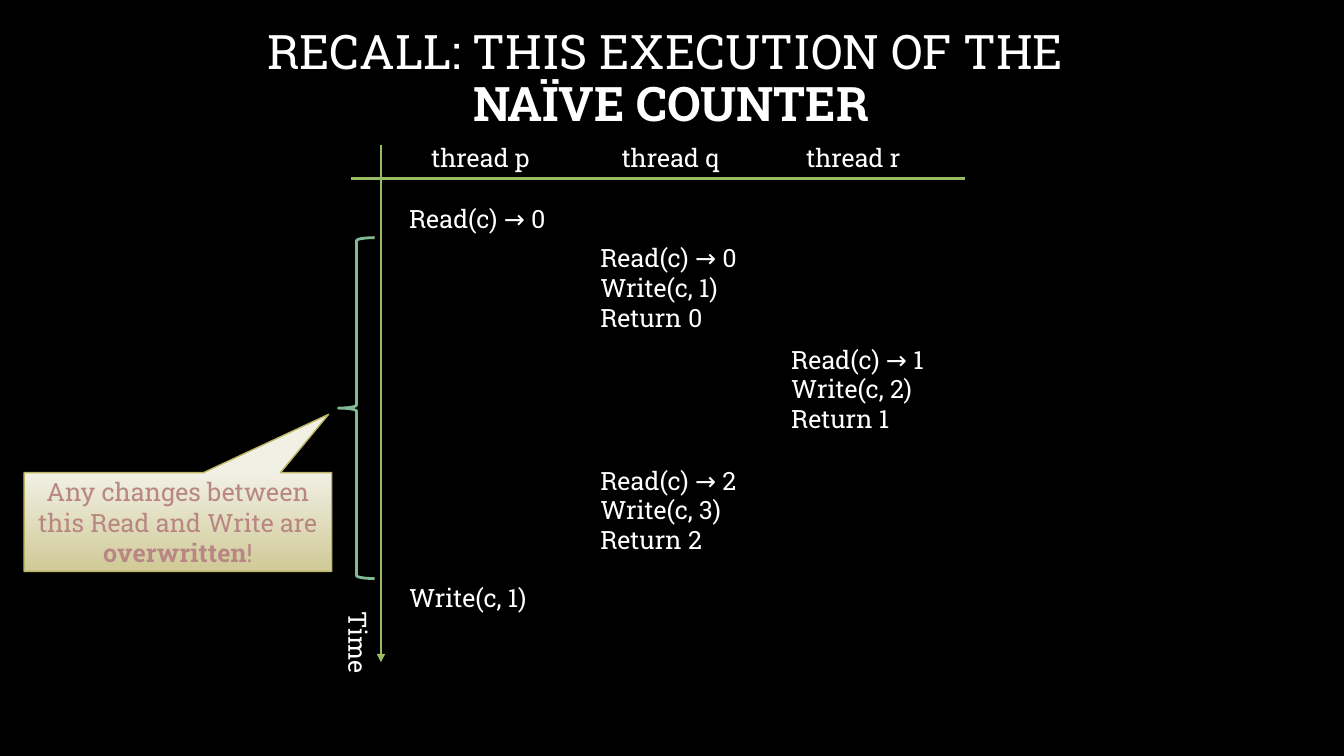
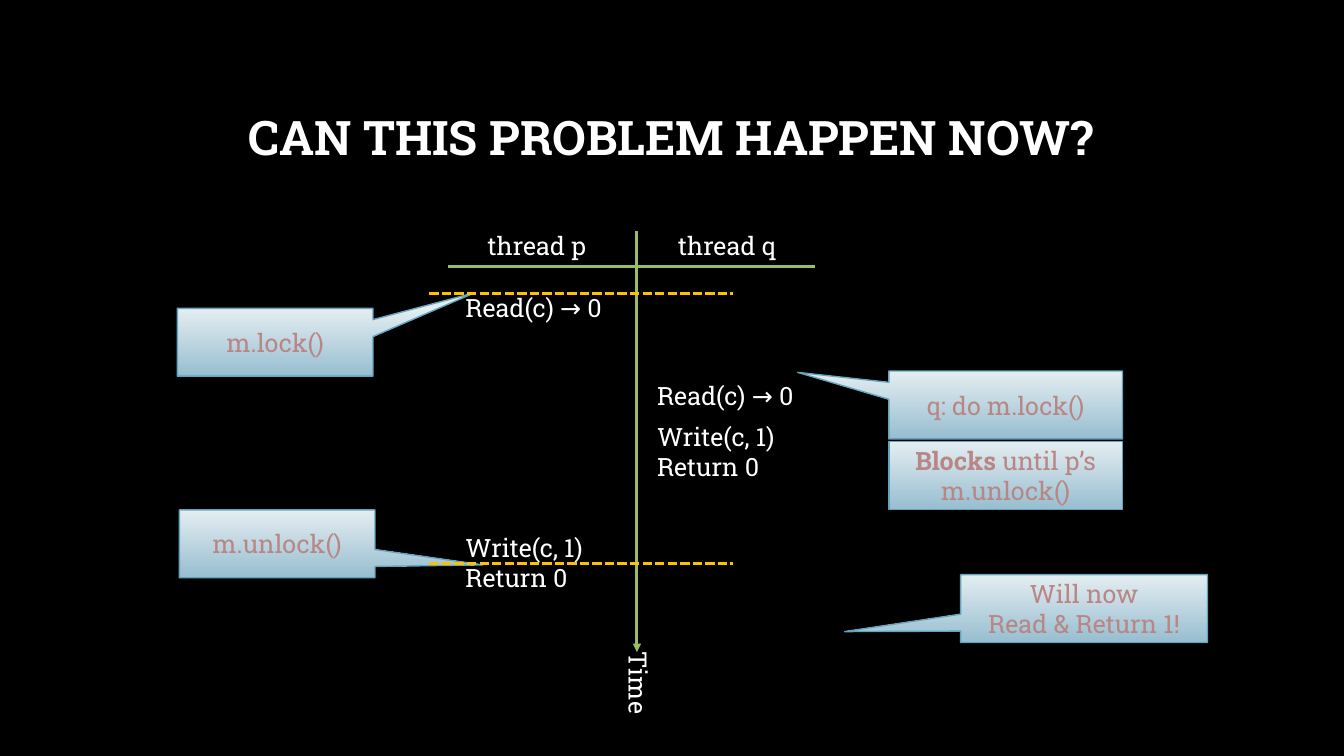
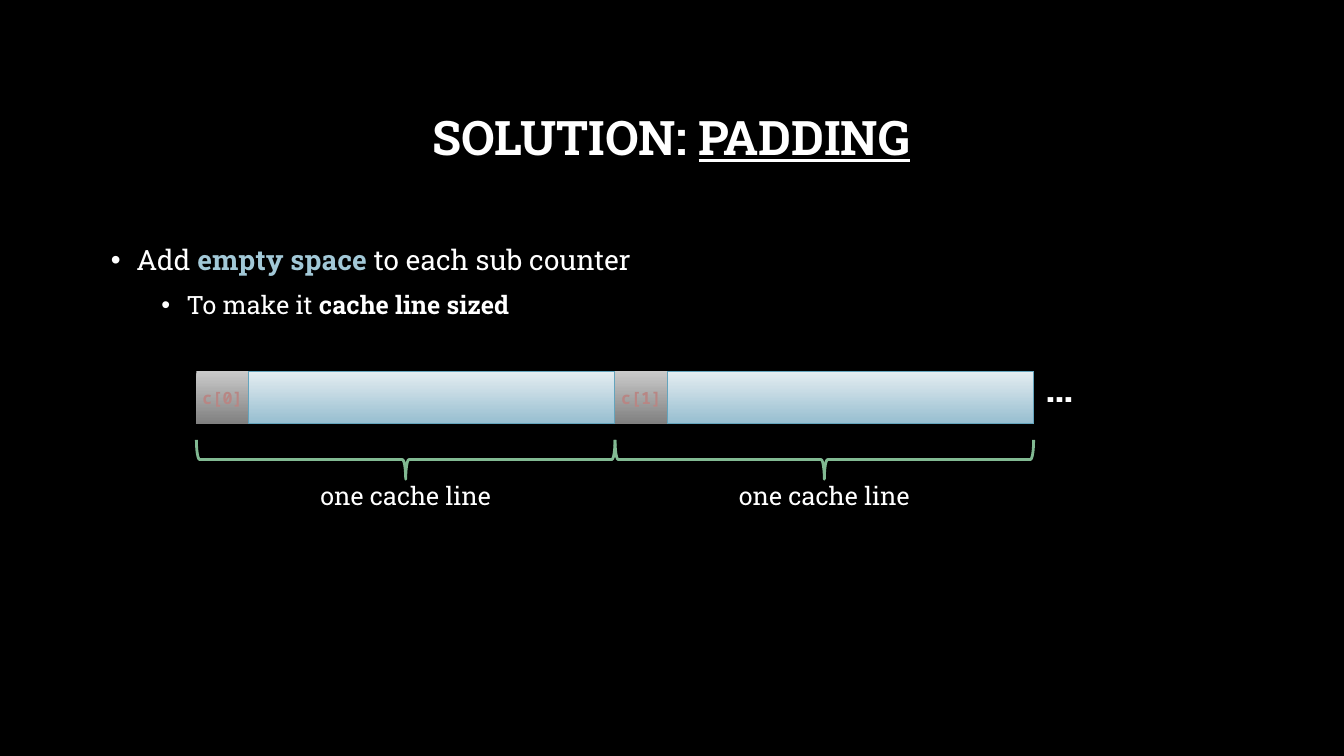
from lxml import etree
from pptx import Presentation
from pptx.dml.color import RGBColor
from pptx.enum.dml import MSO_LINE
from pptx.enum.shapes import MSO_CONNECTOR, MSO_SHAPE
from pptx.enum.text import MSO_ANCHOR, MSO_AUTO_SIZE, PP_ALIGN
from pptx.oxml.ns import qn
from pptx.util import Cm, Pt

RECT, CALLOUT = MSO_SHAPE.RECTANGLE, MSO_SHAPE.RECTANGULAR_CALLOUT
BRACE = MSO_SHAPE.LEFT_BRACE
STRAIGHT, DASH = MSO_CONNECTOR.STRAIGHT, MSO_LINE.SQUARE_DOT
MIDDLE, TOP = MSO_ANCHOR.MIDDLE, MSO_ANCHOR.TOP
LEFT, CENTER = PP_ALIGN.LEFT, PP_ALIGN.CENTER
FIT, FIXED = MSO_AUTO_SIZE.SHAPE_TO_FIT_TEXT, MSO_AUTO_SIZE.NONE

COLORS = {
    "back": "000000", "text": "FFFFFF", "note": "B88684", "axis": "9ABC65",
    "brace": "81B992", "dash": "FFC000", "key": "A2C8D7",
}
# Gradient top, gradient bottom, outline
FILLS = {
    "blue": ("E4EDF1", "97BED0", "64A4BD"),
    "sand": ("F1F0E4", "D0CA97", "BDB564"),
    "grey": ("CACACA", "808080", None),
}
BASE = {"name": "Roboto Slab", "size": Pt(18), "bold": False}
TITLE = {"size": Pt(34), "bold": True}
BOLD = {"bold": True}
CODE = {"name": "Noto Sans Mono", "size": Pt(12), "bold": True}
LINE_H, PAIR_H = 1.02, 1.8


def rgb(value):
    return RGBColor.from_string(value)


def box(*sizes):
    return [Cm(size) for size in sizes]


def put(frame, paras, align=LEFT, color="text", look=None, **form):
    """Fill a frame; each paragraph is a string or a list of (text, look)."""
    for num, parts in enumerate(paras):
        para = frame.paragraphs[0] if num == 0 else frame.add_paragraph()
        for name, value in {"alignment": align, **form}.items():
            setattr(para, name, value)
        for text, extra in [(parts, {})] if isinstance(parts, str) else parts:
            style = {**BASE, **(look or {}), **extra}
            tint = style.pop("color", color)
            for row, piece in enumerate(text.split("\n")):
                if row:
                    para.add_line_break()
                if not piece:
                    continue
                run = para.add_run()
                run.text = piece
                for name, value in style.items():
                    setattr(run.font, name, value)
                run.font.color.rgb = rgb(COLORS[tint])


def setup(frame, **form):
    for name, value in form.items():
        setattr(frame, name, value)
    return frame


def place(shape, *sizes):
    names = ("left", "top", "width", "height")
    for name, value in zip(names, box(*sizes)):
        setattr(shape, name, value)


def new(deck, layout, parts, top=1.7):
    """Add a slide with the shared title style."""
    slide = deck.slides.add_slide(deck.slide_layouts[layout])
    title = slide.shapes.title
    place(title, 2.54, top, 28.75, 3.68)
    frame = setup(title.text_frame, auto_size=FIXED, vertical_anchor=MIDDLE,
                  word_wrap=True)
    put(frame, [parts], CENTER, look=TITLE, line_spacing=0.9)
    return slide


def label(slide, x, y, w, *rows, align=LEFT):
    height = PAIR_H if len(rows) > 1 else LINE_H
    shape = slide.shapes.add_textbox(*box(x, y, w, height))
    put(setup(shape.text_frame, word_wrap=False, auto_size=FIT), rows, align)
    return shape


def line(slide, ends, color="axis", width=2, dash=None, arrow=False):
    link = slide.shapes.add_connector(STRAIGHT, *box(*ends))
    link.line.color.rgb = rgb(COLORS[color])
    link.line.width = Pt(width)
    if dash:
        link.line.dash_style = dash
    props = link._element.spPr
    if arrow:
        tail = etree.SubElement(props.find(qn("a:ln")), qn("a:tailEnd"))
        tail.set("type", "triangle")
    etree.SubElement(props, qn("a:effectLst"))


def block(slide, sizes, parts=None, tip=None, fill="blue", look=None,
          wrap=True):
    """Gradient box, with a pointer when a tip is given."""
    shape = slide.shapes.add_shape(CALLOUT if tip else RECT, *box(*sizes))
    shape.shadow.inherit = False
    for num, value in enumerate(tip or ()):
        shape.adjustments[num] = value
    *tones, edge = FILLS[fill]
    shape.fill.gradient()
    shape.fill.gradient_angle = 270
    for stop, tone in zip(shape.fill.gradient_stops, tones):
        stop.color.rgb = rgb(tone)
    if edge:
        shape.line.color.rgb = rgb(edge)
        shape.line.width = Pt(1)
    else:
        shape.line.fill.background()
    if parts:
        frame = setup(shape.text_frame, word_wrap=wrap,
                      vertical_anchor=MIDDLE)
        put(frame, [parts], CENTER, "note", look)


def brace(slide, *sizes, turn=0):
    shape = slide.shapes.add_shape(BRACE, *box(*sizes))
    shape.shadow.inherit = False
    shape.rotation = turn
    shape.fill.background()
    shape.line.color.rgb = rgb(COLORS["brace"])
    shape.line.width = Pt(2)


def chart(slide, axis, rule, time, head, cols, steps):
    """Thread diagram: time axis, header rule, thread names and steps."""
    line(slide, axis, arrow=True)
    line(slide, rule)
    label(slide, *time, 2.16, "Time").rotation = 90
    for name, x in zip("pqr", cols):
        label(slide, x, head, 3.02, f"thread {name}")
    for x, y, *rows in steps:
        width = 4.32 if rows[0].startswith("Read") else 3.84
        label(slide, x, y, width, *rows)


def recall(deck):
    slide = new(deck, 5, [
        ("RECALL: THIS EXECUTION OF THE \n", {"bold": False}),
        ("NAÏVE COUNTER", {})], top=0.18)
    p, q, r = 10.06, 14.88, 19.69
    chart(slide, (9.6, 3.66, 9.6, 16.69), (8.84, 4.5, 24.31, 4.5),
          (7.95, 15.72), 3.45, (10.62, 15.42, 20.07), [
              (p, 5, "Read(c) → 0"),
              (p, 14.55, "Write(c, 1)"),
              (q, 5.99, "Read(c) → 0"),
              (q, 6.73, "Write(c, 1)", "Return 0"),
              (r, 8.56, "Read(c) → 1"),
              (r, 9.27, "Write(c, 2)", "Return 1"),
              (q, 11.61, "Read(c) → 2"),
              (q, 12.32, "Write(c, 3)", "Return 2")])
    block(slide, (0.61, 11.91, 7.75, 2.49), [
        ("Any changes between this Read and Write are ", {}),
        ("overwritten", BOLD), ("!", {})], (0.49, -1.09), "sand")
    brace(slide, 8.53, 5.99, 0.91, 8.59)


def locks(deck):
    slide = new(deck, 5, "CAN THIS PROBLEM HAPPEN NOW?")
    p, q = 11.48, 16.31
    chart(slide, (16.05, 5.82, 16.05, 16.43), (11.3, 6.71, 20.55, 6.71),
          (15.01, 16.74), 5.69, (12.04, 16.84), [
              (p, 7.24, "Read(c) → 0"),
              (p, 13.28, "Write(c, 1)", "Return 0"),
              (q, 9.47, "Read(c) → 0"),
              (q, 10.49, "Write(c, 1)", "Return 0")])
    # Lock calls and their effect
    for x, y, w, parts, tip in (
            (4.47, 7.77, 4.93, "m.lock()", (1.02, -0.73)),
            (4.52, 12.85, 4.93, "m.unlock()", (1.05, 0.31)),
            (22.4, 9.35, 5.89, "q: do m.lock()", (-0.89, -0.48)),
            (22.4, 11.13, 5.89,
             [("Blocks", BOLD), (" until p’s m.unlock()", {})], None),
            (24.21, 14.48, 6.22, "Will now\nRead & Return 1!",
             (-0.97, 0.34))):
        block(slide, (x, y, w, 1.71), parts, tip)
    # Bounds of the locked section
    for y in (7.39, 14.2):
        line(slide, (10.82, y, 18.47, y), "dash", 2.25, DASH)


def bullet(para, left):
    props = para._p.get_or_add_pPr()
    props.set("marL", str(Cm(left)))
    props.set("indent", str(-Cm(0.64)))
    etree.SubElement(props, qn("a:buChar")).set("char", "•")


def padding(deck):
    slide = new(deck, 1, [("SOLUTION: ", {}),
                          ("PADDING", {"underline": True})])
    body = slide.placeholders[1]
    place(body, 2.54, 5.82, 28.75, 10.26)
    frame = setup(body.text_frame, auto_size=FIXED, vertical_anchor=TOP)
    big = {"size": Pt(20)}
    put(frame, [
        [("Add ", big), ("empty space ", {**big, **BOLD, "color": "key"}),
         ("to each sub counter", big)],
        [("To make it ", {}), ("cache line sized", BOLD)]], line_spacing=1.2)
    for level, para in enumerate(frame.paragraphs):
        para.level = level
        para.space_before = Pt((10, 5)[level])
        bullet(para, (0.64, 1.91)[level])

    # Cache lines: one counter and its padding each
    start, top, span, cell, deep = 4.95, 9.36, 10.55, 1.32, 0.99
    for num in range(2):
        x = start + num * span
        mid = x + span / 2
        block(slide, (x, top, cell, cell), f"c[{num}]", fill="grey",
              look=CODE, wrap=False)
        block(slide, (x + cell, top, span - cell, cell))
        brace(slide, mid - deep / 2, 11.58 - span / 2, deep, span, turn=270)
        label(slide, mid - 2.58, 11.99, 5.16, "one cache line", align=CENTER)
    more = slide.shapes.add_textbox(*box(start + 2 * span, 9.09, cell, cell))
    put(setup(more.text_frame, word_wrap=False, vertical_anchor=MIDDLE),
        ["…"], CENTER, look={"size": Pt(28), "bold": True})


def main():
    deck = Presentation()
    deck.slide_width, deck.slide_height = box(33.87, 19.05)
    back = deck.slide_master.background.fill
    back.solid()
    back.fore_color.rgb = rgb(COLORS["back"])
    recall(deck)
    locks(deck)
    padding(deck)
    deck.save("out.pptx")


if __name__ == "__main__":
    main()
